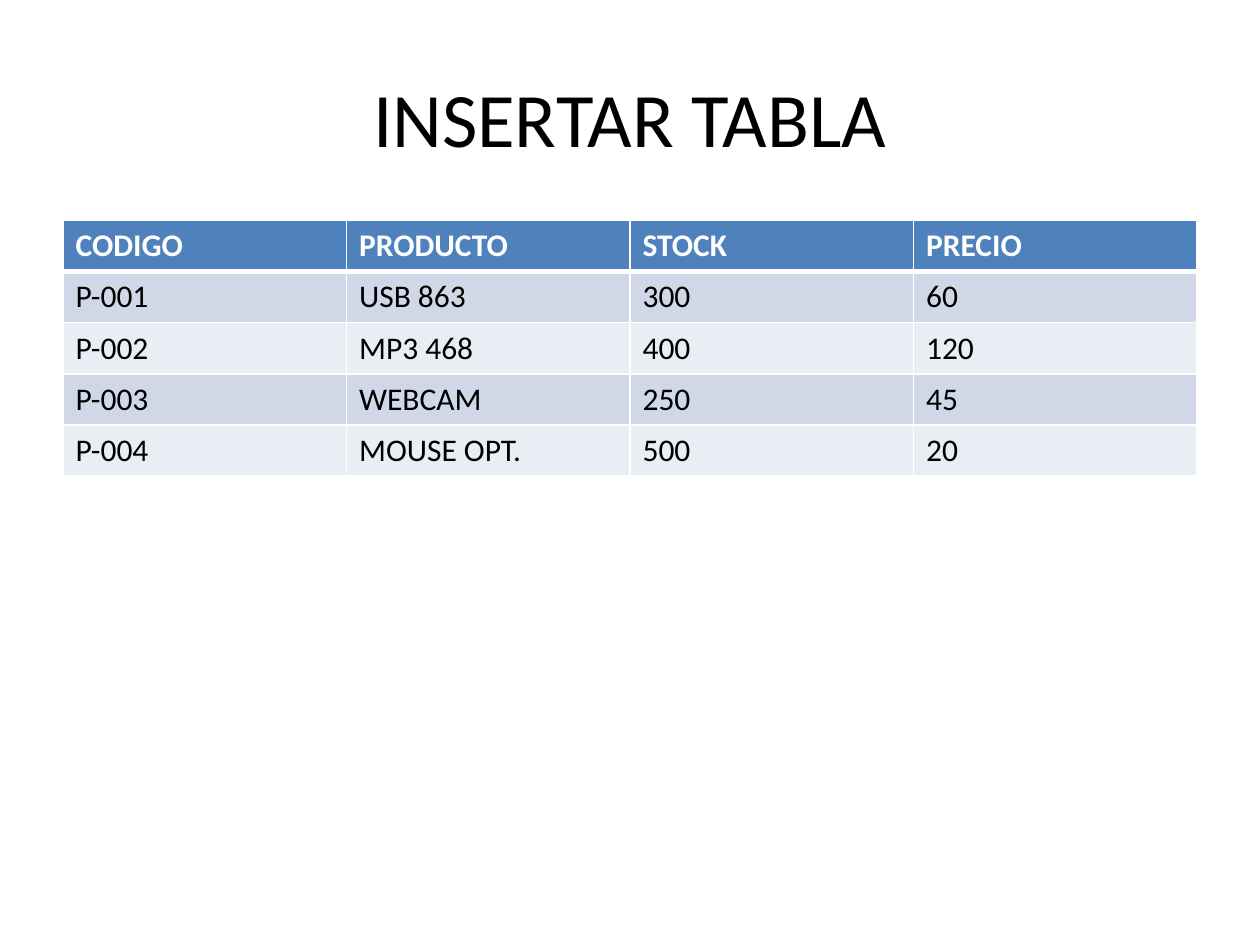
from pptx import Presentation
from pptx.dml.color import RGBColor
from pptx.enum.text import MSO_ANCHOR, PP_ALIGN
from pptx.util import Pt
from lxml.etree import SubElement
from pptx.oxml.ns import qn

TITLE = "INSERTAR TABLA"
ROWS = [
    ("CODIGO", "PRODUCTO", "STOCK", "PRECIO"),
    ("P-001", "USB 863", "300", "60"),
    ("P-002", "MP3 468", "400", "120"),
    ("P-003", "WEBCAM", "250", "45"),
    ("P-004", "MOUSE OPT.", "500", "20"),
]
HEAD, BANDS = "4F81BD", ("D0D8E8", "E9EDF4")
WHITE, BLACK = "FFFFFF", "000000"
LEFT, WIDE = 36, 648
TOP, HIGH = 126, 29.2


def paint(item, color):
    item.fill.solid()
    item.fill.fore_color.rgb = RGBColor.from_string(color)


def style(par, color, **form):
    for name, value in {"name": "Calibri", **form}.items():
        setattr(par.font, name, value)
    par.font.color.rgb = RGBColor.from_string(color)


def place(shape, *box):
    for name, value in zip(("left", "top", "width", "height"), box):
        setattr(shape, name, Pt(value))


def edge(cell, row):
    props = cell._tc.get_or_add_tcPr()
    widths = {"L": 1, "R": 1, "T": 3 if row == 1 else 1, "B": 3 if row == 0 else 1}
    for side, width in widths.items():
        line = SubElement(props, qn("a:ln" + side), w=str(Pt(width)))
        fill = SubElement(line, qn("a:solidFill"))
        SubElement(fill, qn("a:srgbClr"), val=WHITE)


def main():
    deck = Presentation()
    deck.slide_width, deck.slide_height = Pt(720), Pt(540)
    slide = deck.slides.add_slide(deck.slide_layouts[5])
    paint(slide.background, WHITE)

    title = slide.shapes.title
    place(title, LEFT, 21.6, WIDE, 90)
    frame = title.text_frame
    frame.text = TITLE
    frame.vertical_anchor = MSO_ANCHOR.MIDDLE
    frame.paragraphs[0].alignment = PP_ALIGN.CENTER
    style(frame.paragraphs[0], BLACK, size=Pt(44))

    box = [Pt(n) for n in (LEFT, TOP, WIDE, HIGH * len(ROWS))]
    table = slide.shapes.add_table(len(ROWS), len(ROWS[0]), *box).table
    for r, row in enumerate(ROWS):
        head = r == 0
        for c, text in enumerate(row):
            cell = table.cell(r, c)
            cell.text = text
            edge(cell, r)
            paint(cell, HEAD if head else BANDS[(r - 1) % 2])
            style(cell.text_frame.paragraphs[0], WHITE if head else BLACK,
                  size=Pt(18), bold=head)

    deck.save("out.pptx")


if __name__ == "__main__":
    main()
